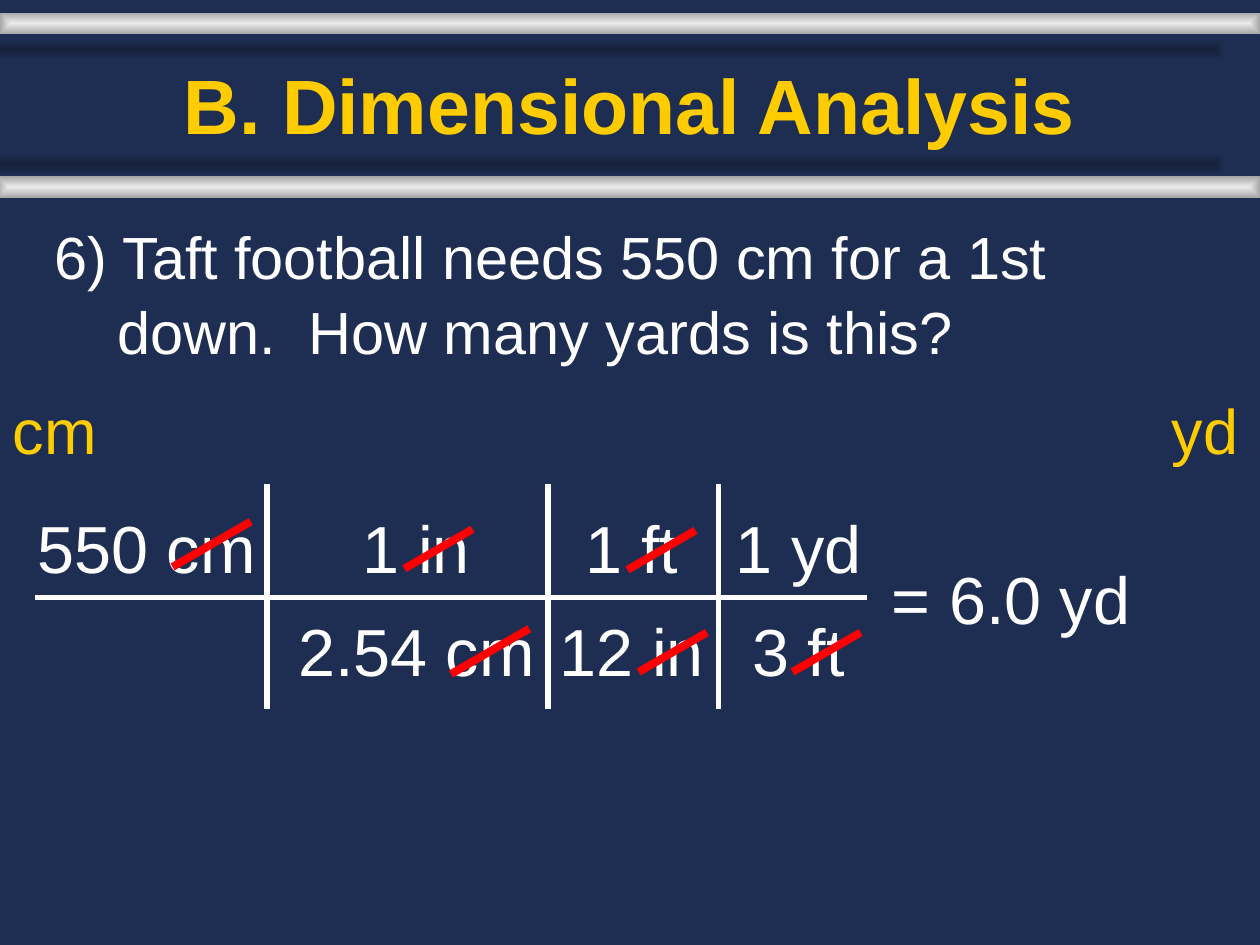
"""Build a dimensional analysis slide with a crossed-out unit conversion grid."""
from dataclasses import dataclass

from lxml import etree
from pptx import Presentation
from pptx import util as u
from pptx.dml.color import RGBColor
from pptx.enum import shapes, text
from pptx.oxml import parse_xml
from pptx.oxml.ns import nsdecls, qn


@dataclass(frozen=True)
class Theme:
    font: str = "Arial"
    navy: str = "1E2E53"
    shade: str = "15213B"
    silver: str = "EAEAEA"
    steel: str = "A7A7A7"
    gold: str = "FFCC00"
    white: str = "FFFFFF"
    red: str = "FF0000"
    title_size: int = 44
    question_size: int = 34
    unit_size: int = 36
    factor_size: int = 38
    grid_width: float = 3
    strike_width: float = 4.5
    line_spacing: float = 1.05


THEME = Theme()
LEFT, CENTER = text.PP_ALIGN.LEFT, text.PP_ALIGN.CENTER


def place(item, left, top, width, height):
    item.left, item.top = u.Inches(left), u.Inches(top)
    item.width, item.height = u.Inches(width), u.Inches(height)


def style(paragraph, size, color, align=LEFT, bold=False):
    paragraph.alignment = align
    font = paragraph.font
    font.name, font.size, font.bold = THEME.font, u.Pt(size), bold
    font.color.rgb = RGBColor.from_string(color)


def hang(paragraph):
    properties = paragraph._p.get_or_add_pPr()
    properties.set("marL", str(u.Inches(0.5)))
    properties.set("indent", str(-u.Inches(0.5)))


def add_bar(slide, left, top, width, center, edge):
    bar = slide.shapes.add_shape(
        shapes.MSO_SHAPE.RECTANGLE,
        u.Inches(left), u.Inches(top), u.Inches(width), u.Inches(0.17))
    bar.shadow.inherit = False
    bar.line.fill.background()
    gradient = parse_xml(
        f'<a:gradFill {nsdecls("a")} rotWithShape="1"><a:gsLst>'
        f'<a:gs pos="0"><a:srgbClr val="{center}"/></a:gs>'
        f'<a:gs pos="100000"><a:srgbClr val="{edge}"/></a:gs></a:gsLst>'
        '<a:path path="rect"><a:fillToRect l="50000" t="50000" r="50000" b="50000"/>'
        '</a:path></a:gradFill>')
    bar._element.spPr.find(qn("a:prstGeom")).addnext(gradient)


def fill_title(slide, wording):
    title = slide.shapes.title
    place(title, 0.75, 0.32, 8.5, 0.92)
    frame = title.text_frame
    frame.text = wording
    frame.auto_size = text.MSO_AUTO_SIZE.NONE
    frame.vertical_anchor = text.MSO_ANCHOR.BOTTOM
    style(frame.paragraphs[0], THEME.title_size, THEME.gold, CENTER, bold=True)


def fill_question(slide, wording):
    body = slide.placeholders[1]
    place(body, 0.33, 1.67, 9.33, 1.54)
    frame = body.text_frame
    frame.text = wording
    frame.auto_size = text.MSO_AUTO_SIZE.NONE
    question = frame.paragraphs[0]
    style(question, THEME.question_size, THEME.white)
    question.line_spacing = THEME.line_spacing
    hang(question)
    etree.SubElement(question._p.get_or_add_pPr(), qn("a:buNone"))


def add_factor(slide, left, top, width, height, lines, align=LEFT):
    box = slide.shapes.add_textbox(
        u.Inches(left), u.Inches(top), u.Inches(width), u.Inches(height))
    frame = box.text_frame
    frame.word_wrap = True
    frame.text = "\n".join(lines)
    for row, paragraph in enumerate(frame.paragraphs):
        style(paragraph, THEME.factor_size, THEME.white, align)
        paragraph.line_spacing = THEME.line_spacing
        paragraph.space_before = u.Pt(row * 0.3 * THEME.factor_size)
        hang(paragraph)


def add_unit(slide, left, width, unit):
    box = slide.shapes.add_textbox(
        u.Inches(left), u.Inches(3.03), u.Inches(width), u.Inches(0.7))
    frame = box.text_frame
    frame.word_wrap = False
    frame.auto_size = text.MSO_AUTO_SIZE.SHAPE_TO_FIT_TEXT
    frame.text = unit
    style(frame.paragraphs[0], THEME.unit_size, THEME.gold, CENTER)
    frame.paragraphs[0].line_spacing = THEME.line_spacing


def add_line(slide, start, end, color, width):
    line = slide.shapes.add_connector(
        shapes.MSO_CONNECTOR.STRAIGHT, *map(u.Inches, start + end))
    line.line.color.rgb = RGBColor.from_string(color)
    line.line.width = u.Pt(width)
    etree.SubElement(line._element.spPr, qn("a:effectLst"))


def add_strike(slide, right, top, width):
    add_line(slide, (right, top), (right - width, top + 0.58 * width),
             THEME.red, THEME.strike_width)


def main():
    deck = Presentation()
    deck.slide_width, deck.slide_height = u.Inches(10), u.Inches(7.5)
    slide = deck.slides.add_slide(deck.slide_layouts[1])
    slide.background.fill.solid()
    slide.background.fill.fore_color.rgb = RGBColor.from_string(THEME.navy)

    for left, bar_top, shade_top, width in ((0, 0.1, 0.31, 10), (-0.02, 1.4, 1.22, 10.02)):
        add_bar(slide, left, bar_top, width, THEME.silver, THEME.steel)
        add_bar(slide, left - 0.28, shade_top, width, THEME.shade, THEME.navy)

    fill_title(slide, "B. Dimensional Analysis")
    fill_question(slide, "6) Taft football needs 550 cm for a 1st \tdown.  How many yards is this?")
    add_unit(slide, 0, 0.87, "cm")
    add_unit(slide, 9.2, 0.73, "yd")

    add_factor(slide, 0.2, 3.94, 2.11, 0.86, ["550 cm"])
    for left, width, fraction in (
        (2.2, 2.21, ["1 in", "2.54 cm"]),
        (4.34, 1.35, ["1 ft", "12 in"]),
        (5.73, 1.22, ["1 yd", "3 ft"]),
    ):
        add_factor(slide, left, 3.94, width, 1.77, fraction, CENTER)
    add_factor(slide, 6.98, 4.35, 2.62, 0.79, ["= 6.0 yd"])

    add_line(slide, (0.28, 4.74), (6.88, 4.74), THEME.white, THEME.grid_width)
    for divider in (2.12, 4.35, 5.7):
        add_line(slide, (divider, 3.84), (divider, 5.63), THEME.white, THEME.grid_width)

    for right, top, width in (
        (1.99, 4.14, 0.62), (4.2, 4.99, 0.62),
        (3.75, 4.2, 0.54), (5.61, 5.02, 0.54),
        (5.52, 4.21, 0.54), (6.83, 5.02, 0.54),
    ):
        add_strike(slide, right, top, width)

    deck.save("out.pptx")


if __name__ == "__main__":
    main()
